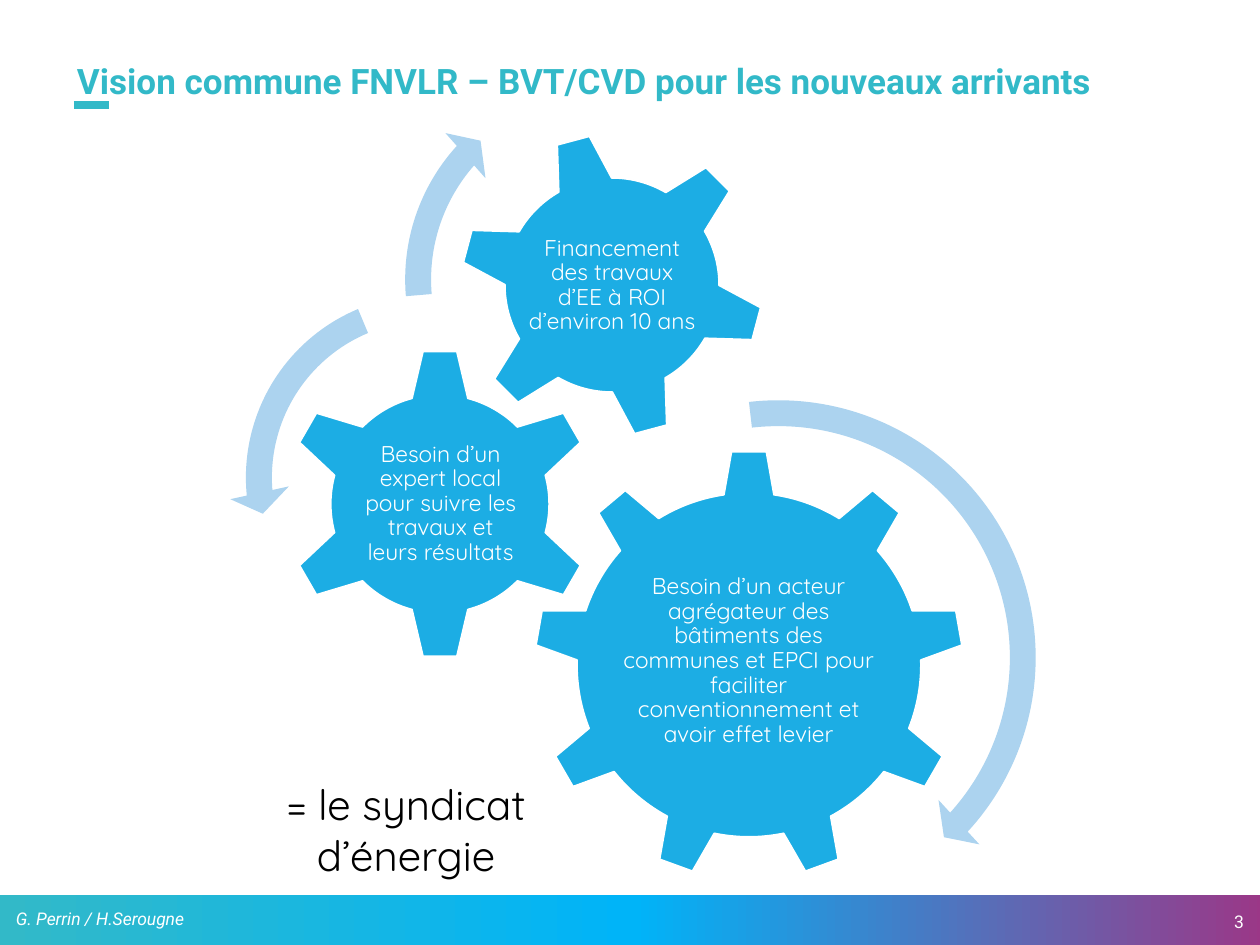
import dataclasses

import pptx
import pptx.dml.color
import pptx.enum.shapes
import pptx.enum.text
import pptx.util
from lxml import etree
from pptx.oxml import ns

SCALE = 914400 / 126  # EMU in one px
SHAPE = pptx.enum.shapes.MSO_SHAPE
ALIGN = pptx.enum.text.PP_ALIGN


@dataclasses.dataclass(frozen=True)
class Theme:
    teal: str = "32B9C8"
    sky: str = "00B4F8"
    plum: str = "9B3787"
    gear: str = "1CADE4"
    arrow: str = "ACD3EF"
    white: str = "FFFFFF"
    black: str = "000000"
    head: str = "Roboto"
    body: str = "Quicksand"
    title: int = 20
    large: int = 24
    label: int = 13
    small: int = 10


def px(num):
    return pptx.util.Emu(round(num * SCALE))


def rgb(code):
    return pptx.dml.color.RGBColor.from_string(code)


def write(frame, text, *, font, size, color, bold=False, italic=False,
          align=ALIGN.LEFT, space=1.0, inset=(13, 6), middle=True):
    anchor = pptx.enum.text.MSO_ANCHOR
    frame.word_wrap = True
    frame.auto_size = pptx.enum.text.MSO_AUTO_SIZE.NONE
    frame.vertical_anchor = anchor.MIDDLE if middle else anchor.TOP
    frame.margin_left = frame.margin_right = px(inset[0])
    frame.margin_top = frame.margin_bottom = px(inset[1])
    para = frame.paragraphs[0]
    para.alignment = align
    para.line_spacing = space
    run = para.add_run()
    run.text = text
    run.font.name = font
    run.font.size = pptx.util.Pt(size)
    run.font.color.rgb = rgb(color)
    run.font.bold = bold
    run.font.italic = italic


class Deck:
    def __init__(self, theme, width, height):
        self.theme = theme
        self.file = pptx.Presentation()
        self.file.slide_width = px(width)
        self.file.slide_height = px(height)
        self.slide = None

    def page(self):
        self.slide = self.file.slides.add_slide(self.file.slide_layouts[5])

    def title(self, text, *box):
        item = self.slide.shapes.title
        item.left, item.top, item.width, item.height = map(px, box)
        write(item.text_frame, text, font=self.theme.head, size=self.theme.title,
              color=self.theme.teal, bold=True, space=0.9)

    def text(self, text, *box, **style):
        item = self.slide.shapes.add_textbox(*map(px, box))
        write(item.text_frame, text, **style)

    def shape(self, kind, *box):
        item = self.slide.shapes.add_shape(kind, *map(px, box))
        item.shadow.inherit = False
        item.line.fill.background()
        return item

    def band(self, colors, *box):
        item = self.shape(SHAPE.RECTANGLE, *box)
        item.fill.gradient()
        item.fill.gradient_angle = 0
        stops = item.element.spPr.find(".//" + ns.qn("a:gsLst"))
        stops.clear()
        for num, color in enumerate(colors):
            place = 100000 * num // (len(colors) - 1)
            stop = etree.SubElement(stops, ns.qn("a:gs"), pos=str(place))
            etree.SubElement(stop, ns.qn("a:srgbClr"), val=color)

    def rule(self, left, right, top, color, width):
        line = self.slide.shapes.add_connector(
            pptx.enum.shapes.MSO_CONNECTOR.STRAIGHT, px(left), px(top), px(right), px(top))
        line.line.color.rgb = rgb(color)
        line.line.width = pptx.util.Pt(width)
        etree.SubElement(line.element.spPr, ns.qn("a:effectLst"))

    def gear(self, kind, text, box, area, turn=0):
        theme = self.theme
        item = self.shape(kind, *box)
        item.rotation = turn
        item.fill.solid()
        item.fill.fore_color.rgb = rgb(theme.gear)
        item.line.color.rgb = rgb(theme.white)
        item.line.width = pptx.util.Pt(1)
        self.text(text, *area, font=theme.body, size=theme.label, color=theme.white,
                  align=ALIGN.CENTER, space=0.9, inset=(2, 2))

    def arrow(self, kind, left, top, size, bends):
        """Bends are in percent."""
        item = self.shape(kind, left, top, size, size)
        item.fill.solid()
        item.fill.fore_color.rgb = rgb(self.theme.arrow)
        for num, bend in enumerate(bends):
            item.adjustments[num] = bend / 100


def main():
    theme = Theme()
    deck = Deck(theme, 1260, 945)
    deck.page()

    # Title and its accent
    deck.rule(74, 109, 105, theme.teal, 4.5)
    deck.title("Vision commune FNVLR – BVT/CVD pour les nouveaux arrivants", 64, 50, 1109, 66)

    # Footer
    deck.band([theme.teal, theme.sky, theme.plum], 0, 895, 1265, 50)
    small = dict(font=theme.head, size=theme.small, color=theme.white)
    deck.text("G. Perrin / H.Serougne", 3, 894, 284, 50, italic=True, **small)
    deck.text("3", 973, 897, 284, 50, align=ALIGN.RIGHT, **small)

    # Gears
    deck.gear(SHAPE.GEAR_9,
              "Besoin d’un acteur agrégateur des bâtiments des communes et EPCI "
              "pour faciliter conventionnement et avoir effet levier",
              (534, 450, 430, 430), (620, 551, 257, 220))
    deck.gear(SHAPE.GEAR_6,
              "Besoin d’un expert local pour suivre les travaux et leurs résultats",
              (284, 348, 312, 312), (363, 427, 155, 154))
    deck.gear(SHAPE.GEAR_6,
              "Financement des travaux d’EE à ROI d’environ 10 ans",
              (459, 132, 306, 306), (526, 200, 172, 171), turn=345)

    # Turning arrows
    deck.arrow(SHAPE.CIRCULAR_ARROW, 504, 383, 549, (4.7, 299, 2542.9, 15804.8, 5.5))
    deck.arrow(SHAPE.LEFT_CIRCULAR_ARROW, 229, 278, 399, (6.5, 430, 10489.1, 14837.8, 7.5))
    deck.arrow(SHAPE.CIRCULAR_ARROW, 388, 64, 431, (6, 394.1, 13313.8, 10508.2, 7))

    # Conclusion
    deck.text("= le syndicat d’énergie", 253, 773, 306, 115, font=theme.body,
              size=theme.large, color=theme.black, align=ALIGN.CENTER, middle=False)

    deck.file.save("out.pptx")


if __name__ == "__main__":
    main()
